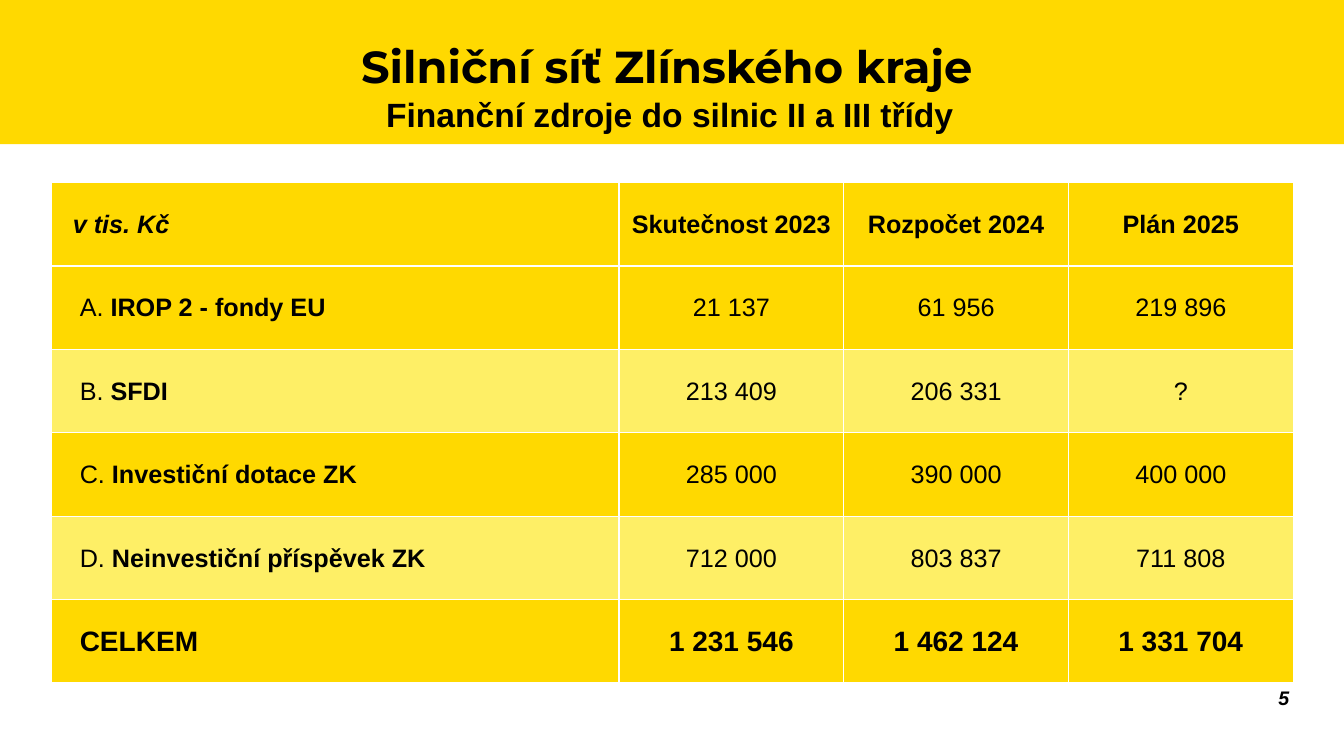
"""Build the slide on funding of class II and III roads in the Zlín Region."""
from dataclasses import dataclass

from lxml import etree
from pptx import Presentation
from pptx.dml.color import RGBColor
from pptx.enum import shapes, text
from pptx.oxml import ns
from pptx.util import Pt

HEADING = "Silniční síť Zlínského kraje"
SUBHEADING = "Finanční zdroje do silnic II a III třídy"
PAGE = "5"
HEADER = ("v tis. Kč", "Skutečnost 2023", "Rozpočet 2024", "Plán 2025")
SOURCES = [
    ("A. ", "IROP 2 - fondy EU", "21 137", "61 956", "219 896"),
    ("B. ", "SFDI", "213 409", "206 331", "?"),
    ("C. ", "Investiční dotace ZK", "285 000", "390 000", "400 000"),
    ("D. ", "Neinvestiční příspěvek ZK", "712 000", "803 837", "711 808"),
]
TOTAL = ("CELKEM", "1 231 546", "1 462 124", "1 331 704")


@dataclass(frozen=True)
class Theme:
    """Colours, fonts and type sizes."""
    yellow: str = "FFD900"
    pale: str = "FEEF66"
    white: str = "FFFFFF"
    black: str = "000000"
    display: str = "Montserrat"
    body: str = "Arial"
    heading: int = 32
    subheading: int = 24
    total: int = 20
    cell: int = 18
    page: int = 14


THEME = Theme()
ALIGN = text.PP_ALIGN
ANCHOR = text.MSO_ANCHOR


def paint(target, colour):
    target.fill.solid()
    target.fill.fore_color.rgb = RGBColor.from_string(colour)


def style(paragraph, size, align=ALIGN.CENTER, face=THEME.body, bold=True, italic=False):
    paragraph.alignment = align
    font = paragraph.font
    font.name, font.size, font.bold, font.italic = face, Pt(size), bold, italic
    font.color.rgb = RGBColor.from_string(THEME.black)


def write(shape, box, words, anchor, size, spacing=None, **look):
    shape.left, shape.top, shape.width, shape.height = map(Pt, box)
    frame = shape.text_frame
    frame.word_wrap = True
    frame.auto_size = text.MSO_AUTO_SIZE.NONE
    frame.vertical_anchor = anchor
    frame.text = words
    frame.paragraphs[0].line_spacing = spacing
    style(frame.paragraphs[0], size, **look)


def outline(cell):
    for side in ("lnL", "lnR", "lnT", "lnB"):
        line = etree.SubElement(cell._tc.get_or_add_tcPr(), ns.qn(f"a:{side}"), w=str(Pt(1)))
        solid = etree.SubElement(line, ns.qn("a:solidFill"))
        etree.SubElement(solid, ns.qn("a:srgbClr"), val=THEME.white)


def fill_cell(cell, parts, colour, indent, size, **look):
    outline(cell)
    paint(cell, colour)
    cell.vertical_anchor = ANCHOR.MIDDLE
    cell.margin_left = cell.margin_right = cell.margin_top = Pt(0.7)
    cell.margin_bottom = 0
    paragraph = cell.text_frame.paragraphs[0]
    for part in parts:
        paragraph.add_run().text = part
    style(paragraph, size, **look)
    if indent:
        paragraph.alignment = ALIGN.LEFT
        paragraph._p.get_or_add_pPr().set("marL", str(Pt(indent)))
    if len(parts) > 1:
        paragraph.runs[-1].font.bold = True


def add_funding(slide):
    left, top, label_width, year_width, row_height = 36.8, 130.4, 405.4, 160.5, 59.6
    rows = [((HEADER[0],), *HEADER[1:])]
    rows += [((letter, name), *amounts) for letter, name, *amounts in SOURCES]
    rows.append(((TOTAL[0],), *TOTAL[1:]))
    widths = [label_width] + [year_width] * (len(HEADER) - 1)
    funding = slide.shapes.add_table(
        len(rows), len(widths), Pt(left), Pt(top), Pt(sum(widths)), Pt(row_height * len(rows))
    ).table
    for column, width in zip(funding.columns, widths):
        column.width = Pt(width)
    last = len(rows) - 1
    for r, (label, *amounts) in enumerate(rows):
        funding.rows[r].height = Pt(row_height)
        colour = THEME.pale if r and r % 2 == 0 else THEME.yellow
        size = THEME.total if r == last else THEME.cell
        bold = r in (0, last)
        label_indent = 19.5 if r else 14.5
        fill_cell(funding.cell(r, 0), label, colour, label_indent, size, bold=bold, italic=r == 0)
        for c, amount in enumerate(amounts, 1):
            fill_cell(funding.cell(r, c), (amount,), colour, 0, size, bold=bold)


def main():
    deck = Presentation()
    deck.slide_width, deck.slide_height = Pt(960), Pt(540)
    slide = deck.slides.add_slide(deck.slide_layouts[5])
    band = slide.shapes.add_shape(shapes.MSO_SHAPE.RECTANGLE, 0, 0, deck.slide_width, Pt(103))
    band.shadow.inherit = False
    band.line.fill.background()
    paint(band, THEME.yellow)
    slide.shapes.title._element.addprevious(band._element)

    write(slide.shapes.title, (33, 26.5, 887, 45.5), HEADING, ANCHOR.MIDDLE,
          THEME.heading, 0.9, face=THEME.display)
    subheading = slide.shapes.add_textbox(0, 0, 0, 0)
    write(subheading, (29, 67, 899, 42.5), SUBHEADING, ANCHOR.TOP, THEME.subheading, 0.9)
    add_funding(slide)
    page = slide.shapes.add_textbox(0, 0, 0, 0)
    write(page, (903.5, 486, 24.5, 24), PAGE, ANCHOR.BOTTOM, THEME.page,
          align=ALIGN.RIGHT, italic=True)
    deck.save("out.pptx")


if __name__ == "__main__":
    main()
